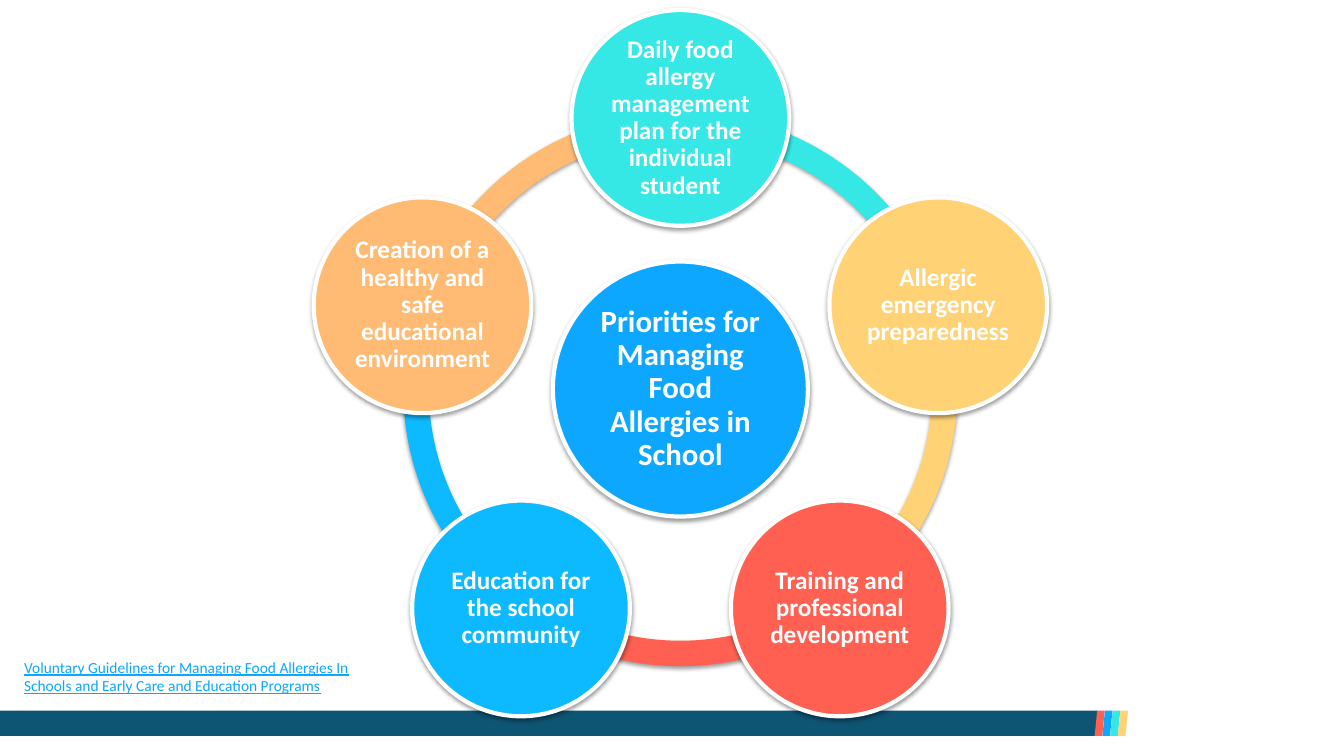
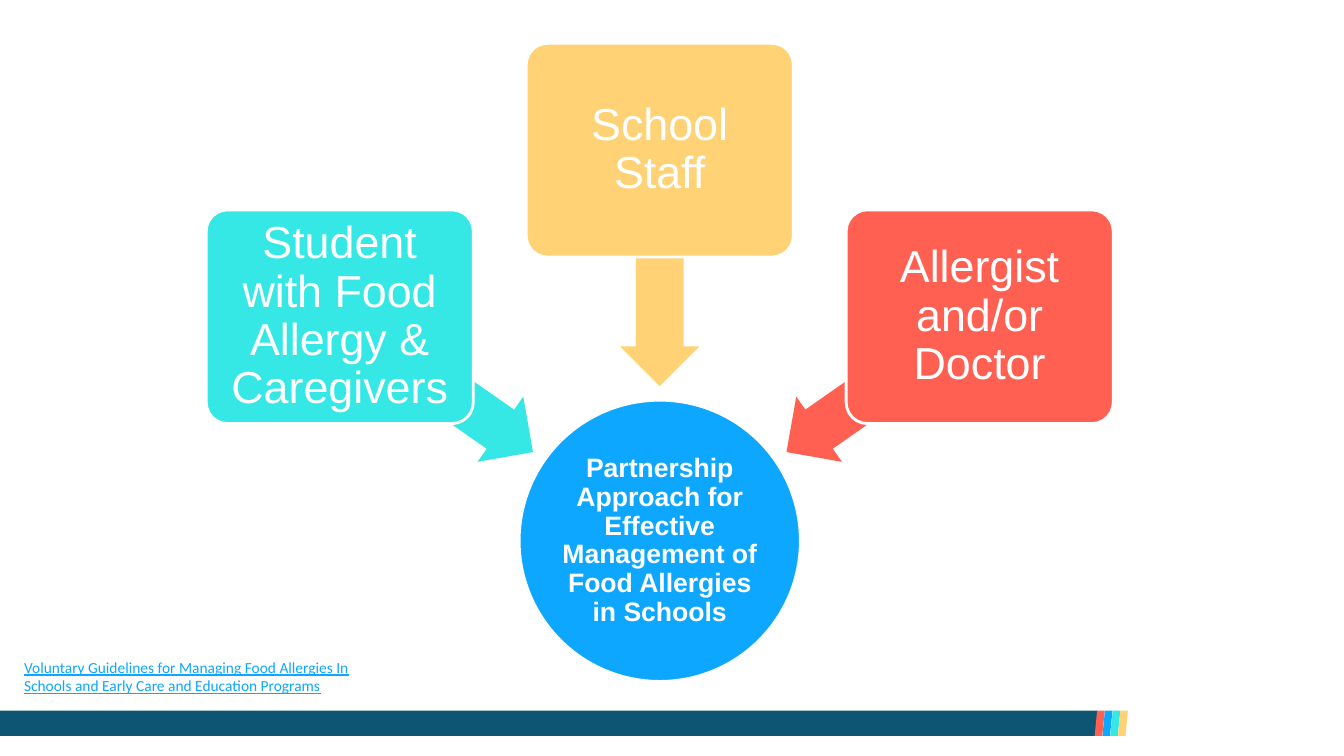
from math import cos, radians, sin

from lxml import etree
from pptx import Presentation
from pptx.dml.color import RGBColor
from pptx.enum.shapes import MSO_SHAPE
from pptx.enum.text import MSO_ANCHOR, PP_ALIGN
from pptx.oxml.ns import qn
from pptx.util import Inches, Pt

CIRCLE, ARC, ARROW = MSO_SHAPE.OVAL, MSO_SHAPE.BLOCK_ARC, MSO_SHAPE.LEFT_ARROW
CARD, BAR, STRIPE = MSO_SHAPE.ROUNDED_RECTANGLE, MSO_SHAPE.RECTANGLE, MSO_SHAPE.PARALLELOGRAM
CENTER, MIDDLE = PP_ALIGN.CENTER, MSO_ANCHOR.MIDDLE

COLUMNS, ROWS = 133.33, 75
CELL = Inches(0.1)
BLANK_LAYOUT = 6

WHITE, NAVY, BLUE, SKY = "FFFFFF", "0E5473", "0DA7FF", "0DBAFF"
RED, TEAL, YELLOW, ORANGE = "FF6051", "36E8E5", "FFD276", "FFBB73"

SOURCE = ("Voluntary Guidelines for Managing Food Allergies In Schools "
          "and Early Care and Education Programs")


def cells(count):
    return round(count * CELL)


def color(hex_string):
    return RGBColor.from_string(hex_string)


def around(center, angle, distance):
    """Return the point at a clockwise angle, in degrees from the right."""
    x, y = center
    return x + distance * cos(radians(angle)), y + distance * sin(radians(angle))


class Deck:
    def __init__(self):
        self.deck = Presentation()
        self.deck.slide_width, self.deck.slide_height = cells(COLUMNS), cells(ROWS)
        self.layout = self.deck.slide_layouts[BLANK_LAYOUT]
        self.slide = None

    def new_slide(self):
        self.slide = self.deck.slides.add_slide(self.layout)
        if len(self.deck.slides) == 1:
            self.footer_band()

    def footer_band(self):
        """Draw the band once and move it to the layout that all slides share."""
        top, height = 70.5, 2.5
        band = [self.shape(BAR, (54.45, top + height / 2), (108.9, height), NAVY)]
        for index, fill in enumerate((RED, BLUE, TEAL, YELLOW)):
            middle = (109.1 + 0.77 * index, top + height / 2)
            band.append(self.shape(STRIPE, middle, (1, height), fill, adjust=[0.25]))
        for part in band:
            self.layout.shapes.element.append(part.element)

    def shape(self, kind, center, size, fill, line=0, adjust=(), shadow=False):
        (x, y), (width, height) = center, size
        shape = self.slide.shapes.add_shape(
            kind, cells(x - width / 2), cells(y - height / 2), cells(width), cells(height))
        for index, value in enumerate(adjust):
            shape.adjustments[index] = value
        shape.fill.solid()
        shape.fill.fore_color.rgb = color(fill)
        if line:
            shape.line.color.rgb = color(WHITE)
            shape.line.width = Pt(line)
        else:
            shape.line.fill.background()
        shape.shadow.inherit = False
        if shadow:
            self.soft_shadow(shape)
        return shape

    def soft_shadow(self, shape):
        effects = shape.element.spPr.find(qn("a:effectLst"))
        outer = etree.SubElement(effects, qn("a:outerShdw"), blurRad=str(Pt(3.1)),
                                 dist=str(Pt(1.6)), dir="5400000", rotWithShape="0")
        black = etree.SubElement(outer, qn("a:srgbClr"), val="000000")
        etree.SubElement(black, qn("a:alpha"), val="38000")

    def span(self, para, words, size, font, fill, bold=False, underline=False):
        span = para.add_run()
        span.text = words
        span.font.size, span.font.name = Pt(size), font
        span.font.bold, span.font.underline = bold, underline
        span.font.color.rgb = color(fill)

    def label(self, shape, words, size, font, inset, bold=False):
        frame = shape.text_frame
        frame.word_wrap, frame.vertical_anchor = True, MIDDLE
        frame.margin_left = frame.margin_right = cells(inset)
        frame.margin_top = frame.margin_bottom = cells(inset)
        para = frame.paragraphs[0]
        para.alignment, para.line_spacing = CENTER, 0.9
        self.span(para, words, size, font, WHITE, bold)

    def disc(self, center, size, fill, words, text_size):
        disc = self.shape(CIRCLE, center, size, fill, line=3, shadow=True)
        self.label(disc, words, text_size, "Calibri", 0.3, bold=True)

    def source_note(self):
        box = self.slide.shapes.add_textbox(cells(1.4), cells(64.8), cells(34.6), cells(4.7))
        box.text_frame.word_wrap = True
        self.span(box.text_frame.paragraphs[0], SOURCE, 11, "Calibri", BLUE, underline=True)


def priorities_slide(deck):
    deck.new_slide()
    hub = (67.5, 38.6)
    priorities = (
        (TEAL, "Daily food allergy management plan for the individual student"),
        (YELLOW, "Allergic emergency preparedness"),
        (RED, "Training and professional development"),
        (SKY, "Education for the school community"),
        (ORANGE, "Creation of a healthy and safe educational environment"),
    )
    step = 360 / len(priorities)
    angles = [270 + step * index for index in range(len(priorities))]
    degree = 0.6  # one degree in units of an arc adjustment
    for angle, (fill, _) in reversed(list(zip(angles, priorities))):
        ends = [angle % 360 * degree, (angle + step) % 360 * degree]
        deck.shape(ARC, hub, (55, 55), fill, adjust=ends + [0.046], shadow=True)
    deck.disc(hub, (25.3, 25.3), BLUE, "Priorities for Managing Food Allergies in School", 22)
    for angle, (fill, words) in zip(angles, priorities):
        deck.disc(around(hub, angle, 26.9), (21.6, 21.4), fill, words, 18)
    deck.source_note()


def partnership_slide(deck):
    deck.new_slide()
    hub = (65.45, 53.65)
    goal = deck.shape(CIRCLE, hub, (27.9, 27.9), BLUE, line=2)
    deck.label(goal, "Partnership Approach for Effective Management of Food Allergies in Schools",
               19, "Arial", 0.1, bold=True)
    partners = (
        (215, TEAL, "Student with Food Allergy & Caregivers"),
        (270, YELLOW, "School Staff"),
        (325, RED, "Allergist and/or Doctor"),
    )
    for angle, fill, words in partners:
        arrow = deck.shape(ARROW, around(hub, angle, 27.1), (23.5, 7.9), fill, adjust=[0.6, 0.5])
        arrow.rotation = angle
        card = deck.shape(CARD, around(hub, angle, 38.75), (26.5, 21.2), fill,
                          line=2, adjust=[0.1])
        deck.label(card, words, 32, "Arial", 0.7)
    deck.source_note()


def main():
    deck = Deck()
    priorities_slide(deck)
    partnership_slide(deck)
    deck.deck.save("out.pptx")


if __name__ == "__main__":
    main()
